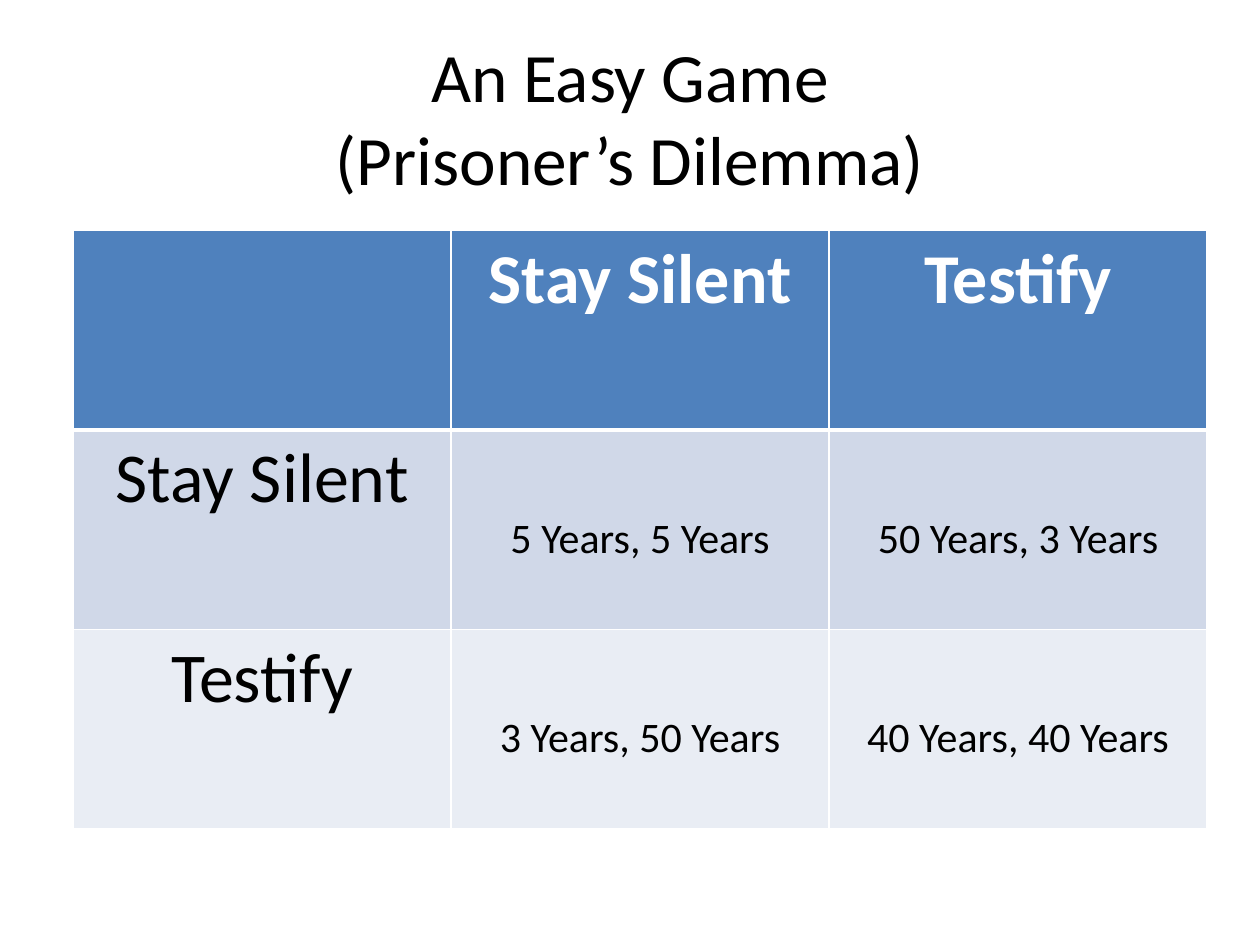
from dataclasses import dataclass

from lxml import etree
from pptx import Presentation
from pptx import util as u
from pptx.dml.color import RGBColor
from pptx.enum import text
from pptx.oxml import ns


@dataclass(frozen=True)
class Theme:
    font: str = "Calibri"
    ink: str = "000000"
    white: str = "FFFFFF"
    header: str = "4F81BD"
    bands: tuple = ("D0D8E8", "E9EDF4")
    title_size: float = 39.6
    strategy_size: float = 40
    payoff_size: float = 24
    rule: float = 1
    header_rule: float = 3


THEME = Theme()
STRATEGIES = ("Stay Silent", "Testify")
PAYOFFS = (
    ("5 Years, 5 Years", "50 Years, 3 Years"),
    ("3 Years, 50 Years", "40 Years, 40 Years"),
)


def set_attributes(target, values):
    for name, value in values.items():
        setattr(target, name, value)


def write(frame, words, size, color, bold=False):
    frame.text = words
    for paragraph in frame.paragraphs:
        paragraph.alignment = text.PP_ALIGN.CENTER
        for run in paragraph.runs:
            set_attributes(run.font, {"name": THEME.font, "size": u.Pt(size), "bold": bold})
            run.font.color.rgb = RGBColor.from_string(color)


def add_title(slide, words):
    title = slide.shapes.add_textbox(u.Inches(0.5), u.Inches(0.3), u.Inches(9), u.Inches(1.25))
    set_attributes(title.text_frame, {"word_wrap": True, "vertical_anchor": text.MSO_ANCHOR.MIDDLE})
    write(title.text_frame, words, THEME.title_size, THEME.ink)


def set_borders(cell, widths):
    properties = cell._tc.get_or_add_tcPr()
    for side, width in widths.items():
        line = etree.SubElement(properties, ns.qn(f"a:ln{side}"), w=str(u.Pt(width)))
        fill = etree.SubElement(line, ns.qn("a:solidFill"))
        etree.SubElement(fill, ns.qn("a:srgbClr"), val=THEME.white)


def style_cell(cell, row, fill):
    top = THEME.header_rule if row == 1 else THEME.rule
    bottom = THEME.header_rule if row == 0 else THEME.rule
    set_borders(cell, {"L": THEME.rule, "R": THEME.rule, "T": top, "B": bottom})
    cell.fill.solid()
    cell.fill.fore_color.rgb = RGBColor.from_string(fill)


def add_payoff_matrix(slide):
    rows = [("", *STRATEGIES)]
    rows += [(strategy, *payoffs) for strategy, payoffs in zip(STRATEGIES, PAYOFFS)]
    matrix = slide.shapes.add_table(
        3, 3, u.Inches(0.58), u.Inches(1.83), u.Inches(9), u.Inches(4.75)
    ).table
    for r, (labels, fill) in enumerate(zip(rows, (THEME.header, *THEME.bands))):
        for c, label in enumerate(labels):
            cell = matrix.cell(r, c)
            style_cell(cell, r, fill)
            is_payoff = r > 0 and c > 0
            if is_payoff:
                cell.margin_top = u.Inches(0.66)
            if label:
                size = THEME.payoff_size if is_payoff else THEME.strategy_size
                color = THEME.ink if r else THEME.white
                write(cell.text_frame, label, size, color, bold=r == 0)


def main():
    deck = Presentation()
    set_attributes(deck, {"slide_width": u.Inches(10), "slide_height": u.Inches(7.5)})
    slide = deck.slides.add_slide(deck.slide_layouts[6])
    add_title(slide, "An Easy Game\v(Prisoner’s Dilemma)")
    add_payoff_matrix(slide)
    deck.save("out.pptx")


if __name__ == "__main__":
    main()
